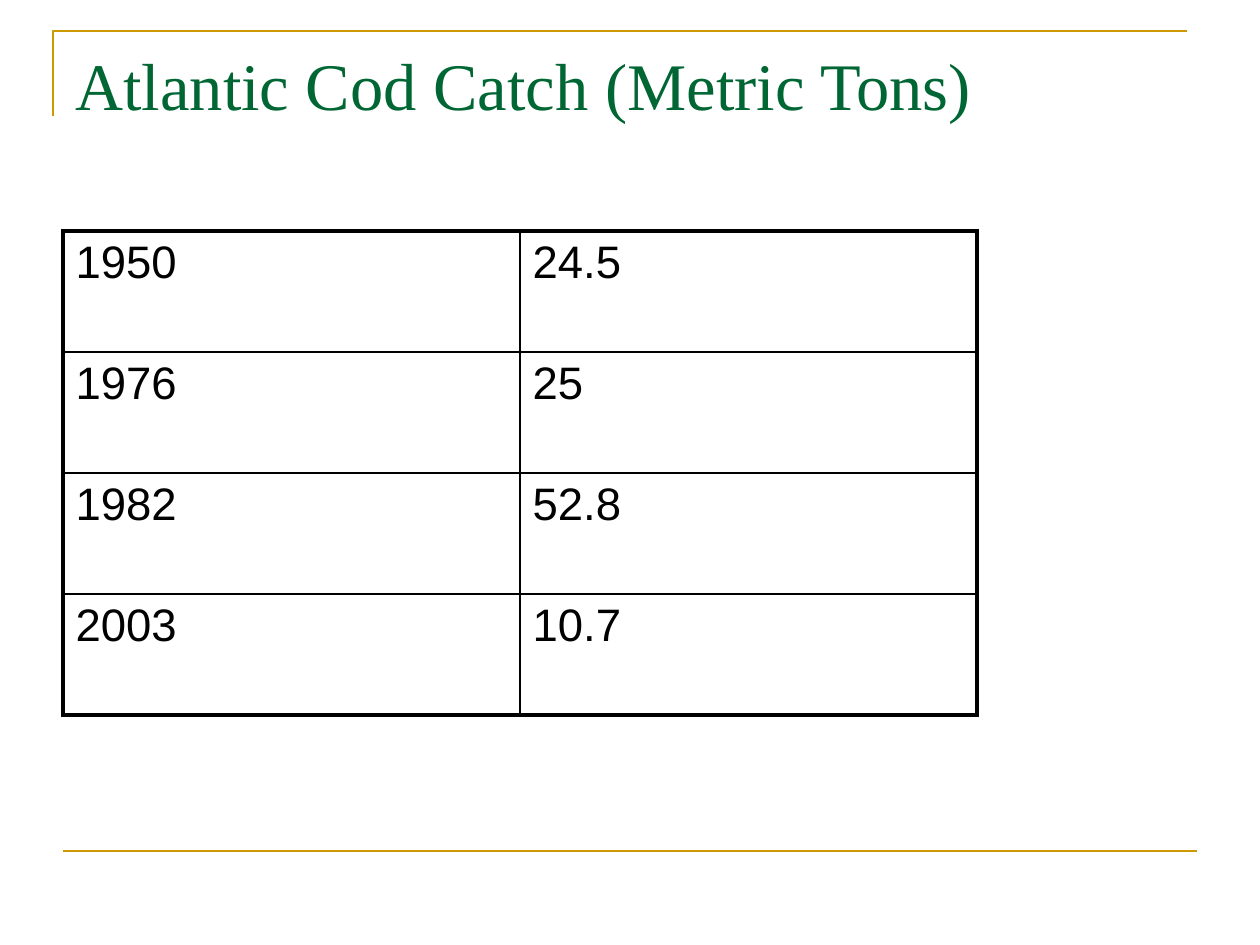
from lxml import etree
from pptx import Presentation
from pptx.dml.color import RGBColor
from pptx.enum.shapes import MSO_CONNECTOR
from pptx.enum.text import MSO_ANCHOR
from pptx.oxml.ns import qn
from pptx.util import Emu, Pt

STRAIGHT = MSO_CONNECTOR.STRAIGHT
TOP = MSO_ANCHOR.TOP
GOLD = RGBColor(0xCC, 0x99, 0x00)
GREEN = RGBColor(0x00, 0x66, 0x33)
BLACK = RGBColor(0x00, 0x00, 0x00)

HEADING = "Atlantic Cod Catch (Metric Tons)"
CATCHES = [("1950", "24.5"), ("1976", "25"), ("1982", "52.8"), ("2003", "10.7")]

HEADING_FONT = {"name": "Times New Roman", "size": Pt(38)}
CELL_FONT = {"name": "Arial", "size": Pt(26)}
CORNER = [(53, 116), (53, 31), (1187, 31)]
FOOTER_RULE = [(63, 851), (1197, 851)]
HEADING_BOX = (63, 38, 1134, 157)
TABLE_LEFT, TABLE_TOP, COLUMN_WIDTH, ROW_HEIGHT = 63, 231, 457, 121
THICK, THIN = Pt(2.25), Pt(1)


def px(length):
    return Emu(round(length * 914400 / 126))


def write(frame, text, font_format, color):
    frame.text = text
    font = frame.paragraphs[0].runs[0].font
    for attribute, value in font_format.items():
        setattr(font, attribute, value)
    font.color.rgb = color


def add_border(cell, side, width):
    border = etree.SubElement(cell._tc.get_or_add_tcPr(), qn(f"a:ln{side}"), w=str(width))
    fill = etree.SubElement(border, qn("a:solidFill"))
    etree.SubElement(fill, qn("a:srgbClr"), val=str(BLACK))


def style_rule(rule):
    rule.line.color.rgb = GOLD
    rule.line.width = Pt(1.5)


deck = Presentation()
deck.slide_width, deck.slide_height = px(1260), px(945)
slide = deck.slides.add_slide(deck.slide_layouts[6])
shapes = slide.shapes

outline = shapes.build_freeform(*map(px, CORNER[0]))
outline.add_line_segments([(px(x), px(y)) for x, y in CORNER[1:]], close=False)
corner = outline.convert_to_shape()
corner.shadow.inherit = False
corner.fill.background()
style_rule(corner)

footer = shapes.add_connector(STRAIGHT, *(px(n) for point in FOOTER_RULE for n in point))
etree.SubElement(footer._element.spPr, qn("a:effectLst"))
style_rule(footer)

heading = shapes.add_textbox(*map(px, HEADING_BOX)).text_frame
heading.word_wrap = True
heading.vertical_anchor = TOP
write(heading, HEADING, HEADING_FONT, GREEN)

row_count, column_count = len(CATCHES), len(CATCHES[0])
table = shapes.add_table(
    row_count, column_count, px(TABLE_LEFT), px(TABLE_TOP),
    px(COLUMN_WIDTH * column_count), px(ROW_HEIGHT * row_count),
).table
table.first_row = table.horz_banding = False
for r, catch in enumerate(CATCHES):
    for c, text in enumerate(catch):
        cell = table.cell(r, c)
        write(cell.text_frame, text, CELL_FONT, BLACK)
        outer_sides = {
            "L": c == 0, "R": c == column_count - 1,
            "T": r == 0, "B": r == row_count - 1,
        }
        for side, is_outer in outer_sides.items():
            add_border(cell, side, THICK if is_outer else THIN)
        cell.fill.background()

deck.save("out.pptx")
